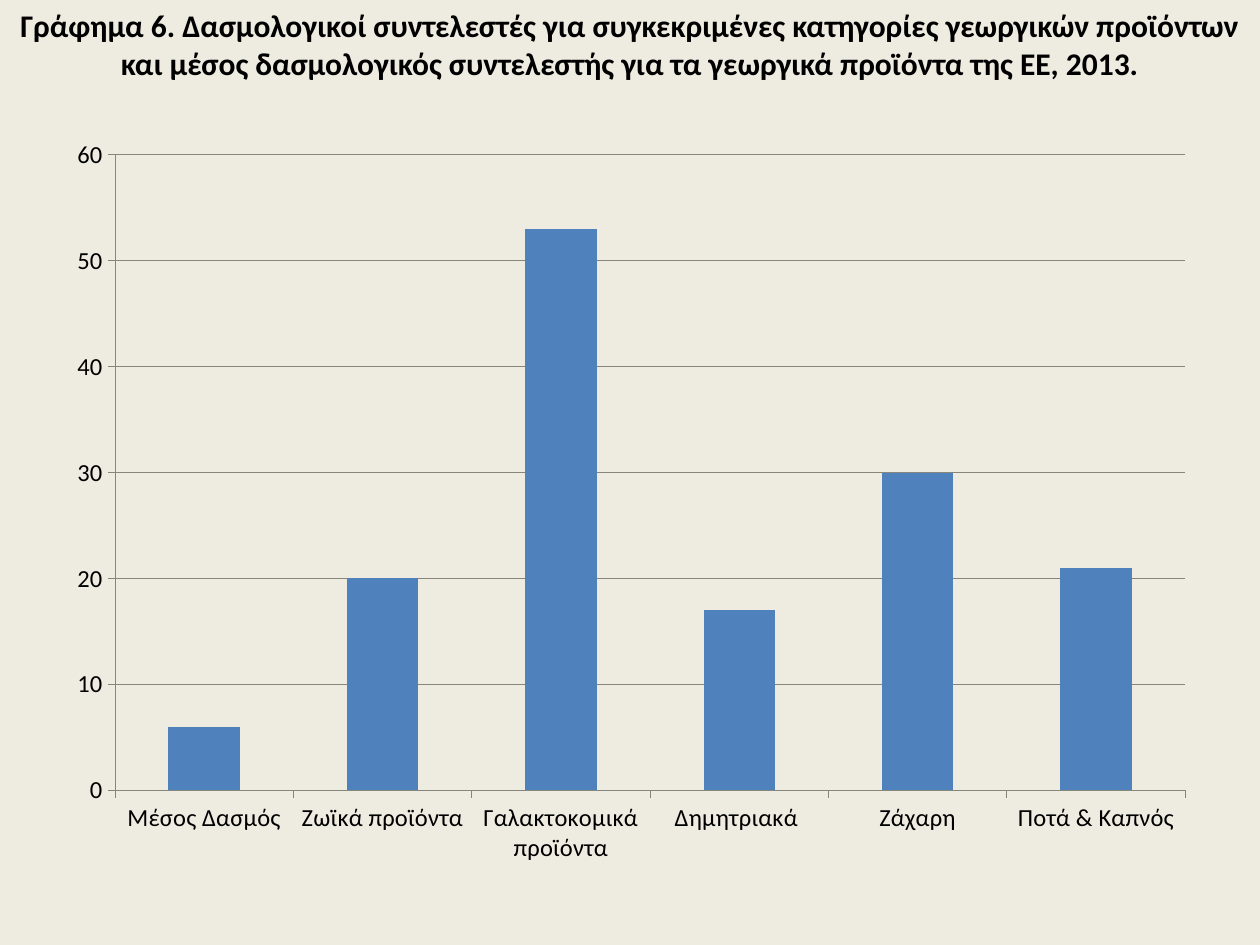
from pptx import Presentation
from pptx.chart.data import CategoryChartData
from pptx.dml.color import RGBColor
from pptx.enum.chart import XL_CHART_TYPE as ChartType, XL_TICK_MARK as TickMark
from pptx.enum.text import MSO_ANCHOR as Anchor, PP_ALIGN as Align
from pptx.util import Inches, Pt

BACKGROUND = RGBColor(0xEE, 0xEC, 0xE1)
TEXT = RGBColor(0x00, 0x00, 0x00)
BAR = RGBColor(0x4F, 0x81, 0xBD)
AXIS = RGBColor(0x86, 0x86, 0x7C)
FONT = "Calibri"
WIDTH, HEIGHT = Inches(10), Inches(7.5)

TITLE = (
    "Γράφημα 6. Δασμολογικοί συντελεστές για συγκεκριμένες κατηγορίες "
    "γεωργικών προϊόντων και μέσος δασμολογικός συντελεστής για τα "
    "γεωργικά προϊόντα της ΕΕ, 2013."
)
TARIFFS = {
    "Μέσος Δασμός": 6,
    "Ζωϊκά προϊόντα": 20,
    "Γαλακτοκομικά προϊόντα": 53,
    "Δημητριακά ": 17,
    "Ζάχαρη": 30,
    "Ποτά & Καπνός": 21,
}


def style_font(font, size, bold=False):
    font.name, font.size, font.bold = FONT, Pt(size), bold
    font.color.rgb = TEXT


def style_line(line):
    line.color.rgb = AXIS
    line.width = Pt(0.5)


def add_title(page, text):
    box = page.shapes.add_textbox(0, 0, WIDTH, HEIGHT)
    frame = box.text_frame
    frame.word_wrap = True
    frame.vertical_anchor = Anchor.TOP
    para = frame.paragraphs[0]
    para.text = text
    para.alignment = Align.CENTER
    style_font(para.font, 18, bold=True)


def style_axis(axis):
    axis.major_tick_mark = TickMark.OUTSIDE
    axis.minor_tick_mark = TickMark.NONE
    style_line(axis.format.line)
    style_font(axis.tick_labels.font, 14)


def add_tariff_chart(page, tariffs):
    data = CategoryChartData()
    data.categories = list(tariffs)
    data.add_series("Series 1", list(tariffs.values()))
    chart = page.shapes.add_chart(
        ChartType.COLUMN_CLUSTERED, Inches(0.43), Inches(0.99),
        Inches(9.16), Inches(5.98), data).chart
    chart.has_title = False
    chart.has_legend = False
    style_font(chart.font, 10)

    # Axes and gridlines
    for axis in (chart.category_axis, chart.value_axis):
        style_axis(axis)
    values = chart.value_axis
    values.minimum_scale, values.maximum_scale, values.major_unit = 0, 60, 10
    values.has_major_gridlines = True
    style_line(values.major_gridlines.format.line)

    # Bars
    plot = chart.plots[0]
    plot.gap_width = 150
    plot.vary_by_categories = False
    bars = plot.series[0].format.fill
    bars.solid()
    bars.fore_color.rgb = BAR


def main():
    deck = Presentation()
    deck.slide_width, deck.slide_height = WIDTH, HEIGHT
    page = deck.slides.add_slide(deck.slide_layouts[6])
    page.background.fill.solid()
    page.background.fill.fore_color.rgb = BACKGROUND
    add_title(page, TITLE)
    add_tariff_chart(page, TARIFFS)
    deck.save("out.pptx")


if __name__ == "__main__":
    main()
